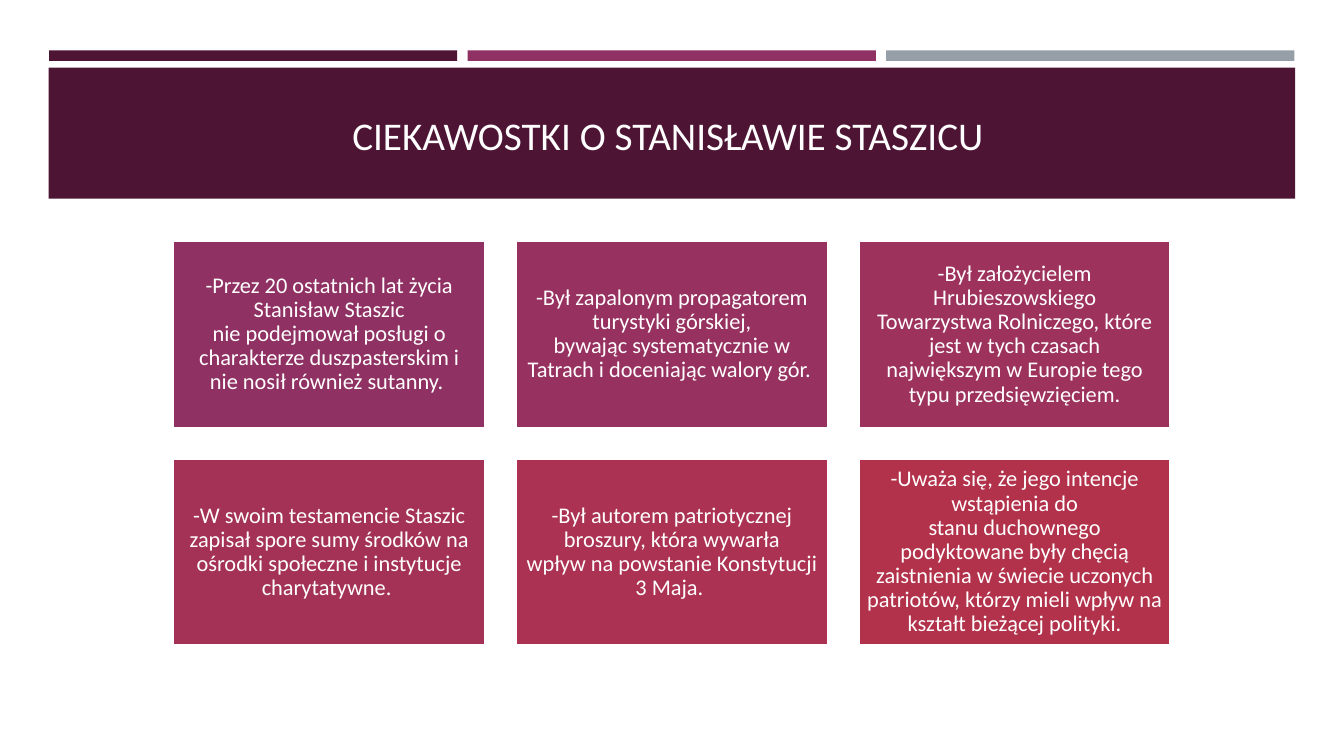
"""Build the slide of curiosities about Stanisław Staszic."""
from pptx import Presentation
from pptx.dml.color import RGBColor
from pptx.enum import shapes, text
from pptx.util import Pt

WHITE = RGBColor(0xFF, 0xFF, 0xFF)
TITLE_WHITE = RGBColor(0xFF, 0xFE, 0xFF)
PLUM = RGBColor(0x4D, 0x14, 0x34)
MAGENTA = RGBColor(0x90, 0x31, 0x63)
GREY = RGBColor(0x96, 0x9F, 0xA7)
HARD_SPACE = chr(160)

FACTS = [
    (MAGENTA, "-Przez 20 ostatnich lat życia Stanisław Staszic nie~podejmował posługi "
              "o charakterze duszpasterskim i nie~nosił również sutanny.~"),
    (RGBColor(0x97, 0x31, 0x60), "-Był zapalonym propagatorem turystyki górskiej, "
     "bywając~systematycznie w Tatrach i doceniając walory gór.~"),
    (RGBColor(0x9D, 0x32, 0x5C), "-Był założycielem Hrubieszowskiego Towarzystwa~Rolniczego, "
     "które jest w tych czasach największym~w Europie tego typu przedsięwzięciem."),
    (RGBColor(0xA4, 0x32, 0x57), "-W swoim testamencie Staszic zapisał spore sumy "
     "środków~na ośrodki społeczne i instytucje charytatywne.~"),
    (RGBColor(0xAB, 0x32, 0x52), "-Był autorem patriotycznej broszury, która wywarła\v"
     "wpływ na~powstanie Konstytucji 3 Maja.~"),
    (RGBColor(0xB2, 0x32, 0x4B), "-Uważa się, że jego intencje wstąpienia do stanu~duchownego "
     "podyktowane były~chęcią zaistnienia w świecie uczonych patriotów, "
     "którzy~mieli wpływ na kształt bieżącej polityki."),
]


def add_block(left, top, width, height, color):
    shape = slide.shapes.add_shape(
        shapes.MSO_SHAPE.RECTANGLE, Pt(left), Pt(top), Pt(width), Pt(height))
    shape.shadow.inherit = False
    shape.fill.solid()
    shape.fill.fore_color.rgb = color
    shape.line.fill.background()
    return shape


def write_centred(frame, wording, size, color, anchor):
    frame.word_wrap = True
    frame.vertical_anchor = anchor
    frame.text = wording.replace("~", HARD_SPACE)
    paragraph = frame.paragraphs[0]
    paragraph.alignment = text.PP_ALIGN.CENTER
    for run in paragraph.runs:
        run.font.name = "Calibri"
        run.font.size = Pt(size)
        run.font.color.rgb = color
    return paragraph


presentation = Presentation()
presentation.slide_width = Pt(960)
presentation.slide_height = Pt(540)
slide = presentation.slides.add_slide(presentation.slide_layouts[6])

for index, color in enumerate([PLUM, MAGENTA, GREY]):
    add_block(35 + index * 299, 36, 291.6, 7.5, color)

add_block(34.7, 48.4, 890.4, 93.6, PLUM)
title = slide.shapes.add_textbox(Pt(46), Pt(55), Pt(868.3), Pt(62))
write_centred(title.text_frame, "CIEKAWOSTKI O STANISŁAWIE STASZICU~", 28,
              TITLE_WHITE, text.MSO_ANCHOR.BOTTOM)

for index, (color, wording) in enumerate(FACTS):
    row, column = divmod(index, 3)
    card = add_block(123.8 + column * 244.8, 172 + row * 155.6, 222.8, 133.6, color)
    card.line.color.rgb = WHITE
    card.line.width = Pt(1.75)
    frame = card.text_frame
    frame.margin_left = frame.margin_right = Pt(4.8)
    frame.margin_top = frame.margin_bottom = Pt(4.8)
    paragraph = write_centred(frame, wording, 16, WHITE, text.MSO_ANCHOR.MIDDLE)
    paragraph.line_spacing = 0.9

presentation.save("out.pptx")
